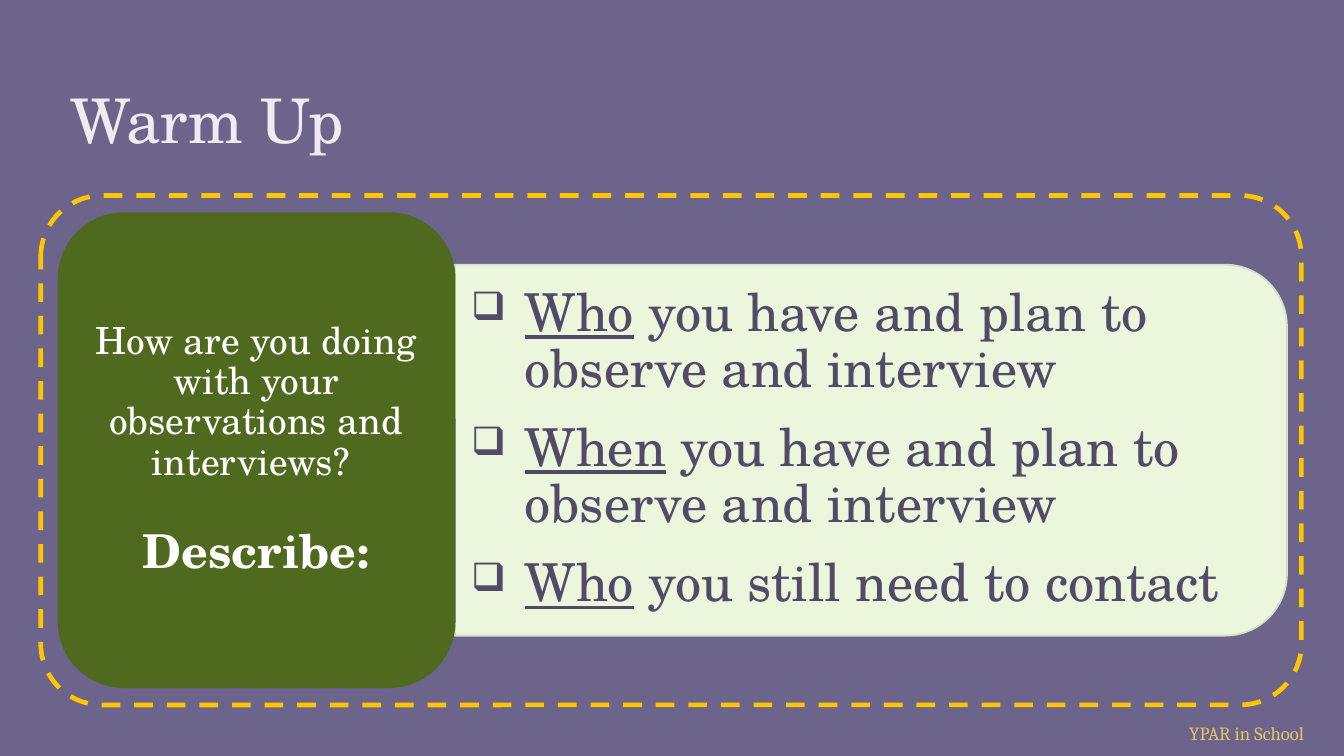
from typing import NamedTuple, Optional

from lxml.etree import SubElement
from pptx import Presentation
from pptx.dml.color import RGBColor
from pptx.enum.dml import MSO_LINE as Dash
from pptx.enum.shapes import MSO_SHAPE as Shape
from pptx.enum.text import MSO_ANCHOR as Anchor, PP_ALIGN as Align
from pptx.oxml.ns import qn
from pptx.util import Inches, Pt

PURPLE = RGBColor(0x6C, 0x64, 0x8B)
DARK_PURPLE = RGBColor(0x51, 0x4B, 0x68)
PALE_LILAC = RGBColor(0xF0, 0xEB, 0xF0)
PALE_GREEN = RGBColor(0xEB, 0xF6, 0xDC)
EDGE_GREEN = RGBColor(0xD3, 0xE1, 0xCA)
GREEN = RGBColor(0x4F, 0x6A, 0x1E)
YELLOW = RGBColor(0xFF, 0xC6, 0x00)
GOLD = RGBColor(0xE4, 0xC4, 0x69)
WHITE = RGBColor(0xFF, 0xFF, 0xFF)
SERIF = "TeX Gyre Schola"

SLIDE_W = Inches(10)
SLIDE_H = SLIDE_W * 9 // 16
CELL = SLIDE_W // 100  # square grid, 100 columns across the slide


class Area(NamedTuple):
    """A place on the grid, in columns and rows."""
    col: float
    row: float
    cols: float
    rows: float

    def emu(self) -> list[int]:
        return [round(n * CELL) for n in self]


class Panel(NamedTuple):
    kind: Shape
    area: Area
    fill: Optional[RGBColor] = None
    line: Optional[RGBColor] = None
    weight: float = 1
    dash: Optional[Dash] = None
    corner: Optional[float] = None
    rotation: float = 0


class Prompt(NamedTuple):
    key: str
    rest: str


PANELS = [
    Panel(Shape.ROUND_2_SAME_RECTANGLE, Area(51, 2.55, 27.6, 61.9),
          PALE_GREEN, EDGE_GREEN, rotation=90),
    Panel(Shape.ROUNDED_RECTANGLE, Area(4.3, 15.8, 29.6, 35.4), GREEN),
    Panel(Shape.ROUNDED_RECTANGLE, Area(3.03, 14.55, 93.8, 37.9), line=YELLOW,
          weight=2.5, dash=Dash.DASH, corner=0.12),
]
PROMPTS = [
    Prompt("Who", " you have and plan to observe and interview"),
    Prompt("When", " you have and plan to observe and interview"),
    Prompt("Who", " you still need to contact"),
]


def add_panel(slide, panel: Panel) -> None:
    shape = slide.shapes.add_shape(panel.kind, *panel.area.emu())
    shape.shadow.inherit = False
    shape.rotation = panel.rotation
    if panel.corner is not None:
        shape.adjustments[0] = panel.corner
    if panel.fill is None:
        shape.fill.background()
    else:
        shape.fill.solid()
        shape.fill.fore_color.rgb = panel.fill
    if panel.line is None:
        shape.line.fill.background()
    else:
        shape.line.color.rgb = panel.line
        shape.line.width = Pt(panel.weight)
        shape.line.dash_style = panel.dash


def add_text_frame(slide, area: Area, anchor: Anchor, side: float, end: float,
                   wrap: bool = True):
    """Add a text box; side and end are its margins in cells."""
    frame = slide.shapes.add_textbox(*area.emu()).text_frame
    frame.word_wrap = wrap
    frame.vertical_anchor = anchor
    frame.margin_left = frame.margin_right = round(side * CELL)
    frame.margin_top = frame.margin_bottom = round(end * CELL)
    return frame


def style(paragraph, size: float, color: RGBColor, font: str = SERIF) -> None:
    paragraph.font.size = Pt(size)
    paragraph.font.name = font
    paragraph.font.color.rgb = color


def add_checkbox(paragraph, indent: float, color: RGBColor) -> None:
    props = paragraph._p.get_or_add_pPr()
    props.set("marL", str(round(indent * CELL)))
    props.set("indent", str(-round(indent * CELL)))
    tint = SubElement(props, qn("a:buClr"))
    SubElement(tint, qn("a:srgbClr"), val=str(color))
    SubElement(props, qn("a:buSzPct"), val="75000")
    SubElement(props, qn("a:buChar"), char="❑")


def add_line(slide, area: Area, text: str, anchor: Anchor, size: float,
             color: RGBColor, font: str, end: float, wrap: bool) -> None:
    paragraph = add_text_frame(slide, area, anchor, 1, end, wrap).paragraphs[0]
    paragraph.text = text
    style(paragraph, size, color, font)


def add_prompts(slide, area: Area, prompts: list[Prompt]) -> None:
    frame = add_text_frame(slide, area, Anchor.MIDDLE, 1.2, 0.6)
    for i, prompt in enumerate(prompts):
        paragraph = frame.add_paragraph() if i else frame.paragraphs[0]
        paragraph.level = 1
        paragraph.line_spacing = 0.9
        paragraph.space_after = Pt(12)
        add_checkbox(paragraph, 4, DARK_PURPLE)
        style(paragraph, 28, DARK_PURPLE)
        key = paragraph.add_run()
        key.text = prompt.key
        key.font.underline = True
        paragraph.add_run().text = prompt.rest


def add_question(slide, area: Area, question: str, task: str) -> None:
    frame = add_text_frame(slide, area, Anchor.MIDDLE, 0.8, 0.4)
    ask, describe = frame.paragraphs[0], frame.add_paragraph()
    for paragraph, text, size in ((ask, question, 20), (describe, task, 25)):
        paragraph.text = text
        paragraph.alignment = Align.CENTER
        paragraph.line_spacing = 0.9
        style(paragraph, size, WHITE)
    ask.space_after = Pt(24)
    describe.font.bold = True


def main() -> None:
    deck = Presentation()
    deck.slide_width, deck.slide_height = SLIDE_W, SLIDE_H
    slide = deck.slides.add_slide(deck.slide_layouts[6])
    slide.background.fill.solid()
    slide.background.fill.fore_color.rgb = PURPLE

    # Footer and title
    add_line(slide, Area(87.5, 53.2, 11, 2.7), "YPAR in School", Anchor.TOP,
             10, GOLD, "Cambria", 0.5, False)
    add_line(slide, Area(4.25, 5.1, 91.5, 7.5), "Warm Up", Anchor.BOTTOM,
             33, PALE_LILAC, SERIF, 1, True)

    # Panels, then the text on them
    for panel in PANELS:
        add_panel(slide, panel)
    add_prompts(slide, Area(33.85, 21, 60.5, 24.9), PROMPTS)
    add_question(slide, Area(5.7, 17.25, 26.7, 32.5),
                 "How are you doing with your observations and interviews? ",
                 "Describe:")

    deck.save("out.pptx")


if __name__ == "__main__":
    main()
